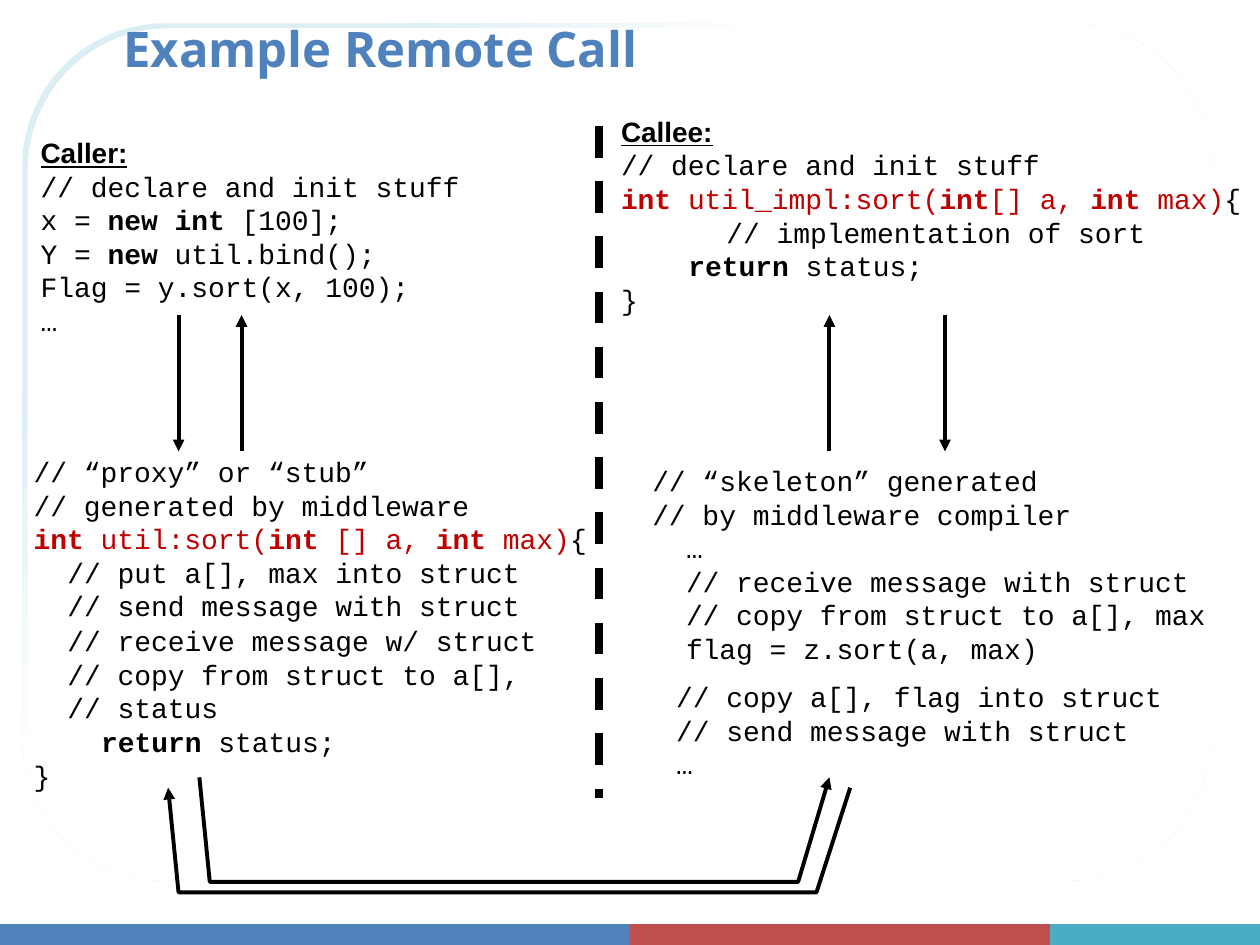
from lxml import etree
from pptx import Presentation
from pptx.dml.color import RGBColor
from pptx.enum.dml import MSO_LINE
from pptx.enum.shapes import MSO_CONNECTOR, MSO_SHAPE
from pptx.enum.text import MSO_ANCHOR
from pptx.oxml.ns import qn
from pptx.util import Cm, Pt

RECTANGLE, ROUNDED = MSO_SHAPE.RECTANGLE, MSO_SHAPE.ROUNDED_RECTANGLE
STRAIGHT, DASH, BOTTOM = MSO_CONNECTOR.STRAIGHT, MSO_LINE.DASH, MSO_ANCHOR.BOTTOM
COLORS = {
    "blue": "4F81BD", "red": "C0504D", "teal": "4BACC6", "pale": "DBEEF4",
    "white": "FFFFFF", "ink": "000000", "signature": "C00000",
}
CODE_FONT, HEADING_FONT, TITLE_FONT = "Courier New", "Arial", "Open Sans"
CODE_SIZE = 16
CHAR_CM = 0.34  # width of one code character
ARROW = 2.25


def rgb(name):
    return RGBColor.from_string(COLORS[name])


class Deck:
    def __init__(self):
        self.prs = Presentation()
        self.prs.slide_width, self.prs.slide_height = Cm(25.4), Cm(19.05)
        self.slide = self.prs.slides.add_slide(self.prs.slide_layouts[6])
        self.shapes = self.slide.shapes

    def panel(self, kind, box, color, fade_to=None):
        """Add an outline-free shape; fade_to makes it a diagonal gradient."""
        panel = self.shapes.add_shape(kind, *map(Cm, box))
        panel.shadow.inherit = False
        panel.line.fill.background()
        if fade_to:
            panel.fill.gradient()
            panel.fill.gradient_angle = 315
            stops = zip(panel.fill.gradient_stops, (color, fade_to), (0.17, 0.37))
            for stop, name, position in stops:
                stop.color.rgb = rgb(name)
                stop.position = position
        else:
            panel.fill.solid()
            panel.fill.fore_color.rgb = rgb(color)

    def frame(self, box):
        frame = self.shapes.add_textbox(*map(Cm, box)).text_frame
        frame.word_wrap = True
        return frame

    def set_font(self, font, name, size, color="ink", bold=None):
        font.name, font.size, font.bold = name, Pt(size), bold
        font.color.rgb = rgb(color)

    def title(self, text, box):
        frame = self.frame(box)
        frame.vertical_anchor = BOTTOM
        paragraph = frame.paragraphs[0]
        paragraph.text = text
        paragraph.line_spacing = 0.9
        self.set_font(paragraph.font, TITLE_FONT, 28, "blue", True)

    def code(self, box, lines, heading=None):
        """Add code lines, each (indent in characters, text).

        In the text, * switches bold and ^ switches the signature colour.
        """
        frame = self.frame(box)
        paragraph = frame.paragraphs[0]
        if heading:
            paragraph.text = heading
            self.set_font(paragraph.font, HEADING_FONT, CODE_SIZE, bold=True)
            paragraph.font.underline = True
            paragraph = frame.add_paragraph()
        for number, (indent, text) in enumerate(lines):
            if number:
                paragraph = frame.add_paragraph()
            margin = Cm(indent * CHAR_CM)
            paragraph._p.get_or_add_pPr().set("marL", str(margin))
            self.set_font(paragraph.font, CODE_FONT, CODE_SIZE)
            self.code_runs(paragraph, text)

    def code_runs(self, paragraph, text):
        bold = False
        for part, colored in enumerate(text.split("^")):
            for position, piece in enumerate(colored.split("*")):
                if position:
                    bold = not bold
                if piece:
                    run = paragraph.add_run()
                    run.text = piece
                    if bold:
                        run.font.bold = True
                    if part % 2:
                        run.font.color.rgb = rgb("signature")

    def stroke(self, line, width, arrow_end=None):
        """Style a line; arrow_end is headEnd (start) or tailEnd (finish)."""
        line.color.rgb = rgb("ink")
        line.width = Pt(width)
        if arrow_end:
            ln = line._get_or_add_ln()
            etree.SubElement(ln, qn("a:" + arrow_end), type="triangle")

    def connector(self, start, end, width, arrow_end=None, dash=None):
        connector = self.shapes.add_connector(STRAIGHT, *map(Cm, start + end))
        etree.SubElement(connector._element.spPr, qn("a:effectLst"))
        connector.line.dash_style = dash
        self.stroke(connector.line, width, arrow_end)

    def route(self, points, arrow_end):
        start, *rest = [(Cm(x), Cm(y)) for x, y in points]
        builder = self.shapes.build_freeform(*start)
        builder.add_line_segments(rest, close=False)
        route = builder.convert_to_shape()
        route.shadow.inherit = False
        route.fill.background()
        self.stroke(route.line, ARROW, arrow_end)


def main():
    deck = Deck()
    for left, width, color in ((0, 12.8, "blue"), (12.7, 8.66, "red"),
                               (21.17, 4.23, "teal")):
        deck.panel(RECTANGLE, (left, 18.63, width, 0.42), color)
    deck.panel(ROUNDED, (0.45, 0.47, 23.95, 17.28), "pale", fade_to="white")
    deck.panel(ROUNDED, (0.56, 0.57, 23.75, 17.12), "white")
    deck.title("Example Remote Call", (2.24, 0.35, 21.6, 1.34))

    deck.code((0.57, 2.61, 9.2, 4.32), [
        (0, "// declare and init stuff"),
        (0, "x = *new int *[100];"),
        (0, "Y = *new *util.bind();"),
        (0, "Flag = y.sort(x, 100);"),
        (0, "…"),
    ], heading="Caller:")
    deck.code((12.27, 2.18, 13.2, 4.37), [
        (0, "// declare and init stuff"),
        (0, "^*int *util_impl:sort(*int*[] a, *int *max)^{"),
        (6.25, "// implementation of sort"),
        (4, "*return* status;"),
        (0, "}"),
    ], heading="Callee:")

    deck.route([(4.02, 15.67), (4.23, 17.78), (16.09, 17.78), (16.72, 15.67)], "tailEnd")
    deck.route([(3.39, 15.88), (3.6, 17.99), (16.46, 17.99), (17.14, 15.88)], "headEnd")

    deck.code((0.43, 12.45, 11.23, 3.66), [
        (2, "// receive message w/ struct"),
        (2, "// copy from struct to a[],"),
        (2, "// status"),
        (4, "*return* status;"),
        (0, "}"),
    ])
    deck.code((12.7, 13.58, 11.2, 2.29), [
        (2, "// copy a[], flag into struct"),
        (2, "// send message with struct"),
        (2, "…"),
    ])

    deck.connector((12.07, 2.54), (12.07, 16.09), 4.5, dash=DASH)
    upper, lower = 6.35, 9.1
    for x, start, end in ((3.6, upper, lower), (16.72, lower, upper),
                          (4.87, lower, upper), (19.05, upper, lower)):
        deck.connector((x, start), (x, end), ARROW, "tailEnd")

    deck.code((0.43, 9.04, 11.8, 3.66), [
        (0, "// “proxy” or “stub”"),
        (0, "// generated by middleware"),
        (0, "^*int *util:sort(*int* [] a, *int* max)^{"),
        (2, "// put a[], max into struct"),
        (2, "// send message with struct"),
    ])
    deck.code((12.9, 9.22, 11.9, 4.32), [
        (0, "// “skeleton” generated"),
        (0, "// by middleware compiler"),
        (2, "…"),
        (2, "// receive message with struct"),
        (2, "// copy from struct to a[], max"),
        (2, "flag = z.sort(a, max)"),
    ])
    deck.prs.save("out.pptx")


if __name__ == "__main__":
    main()
